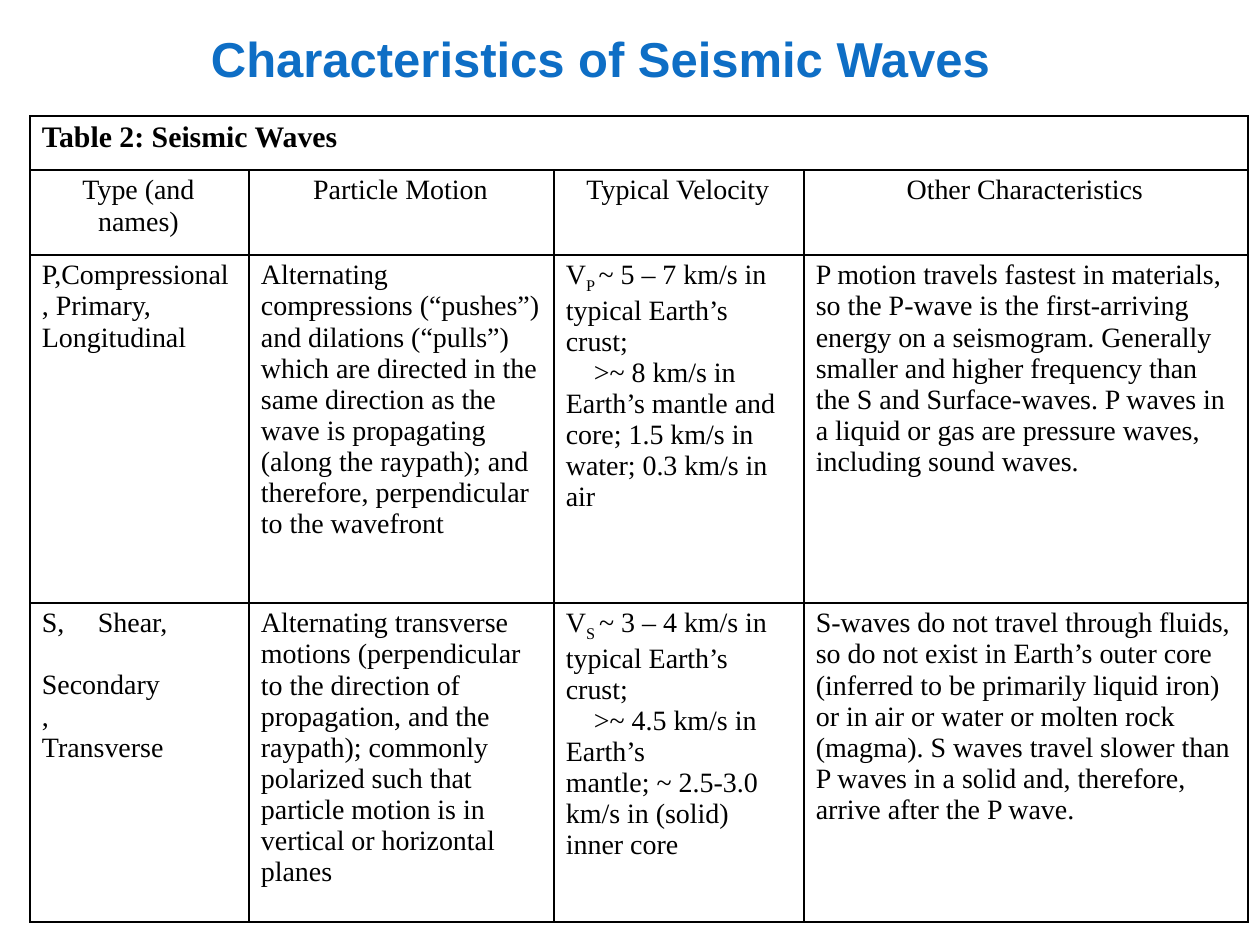
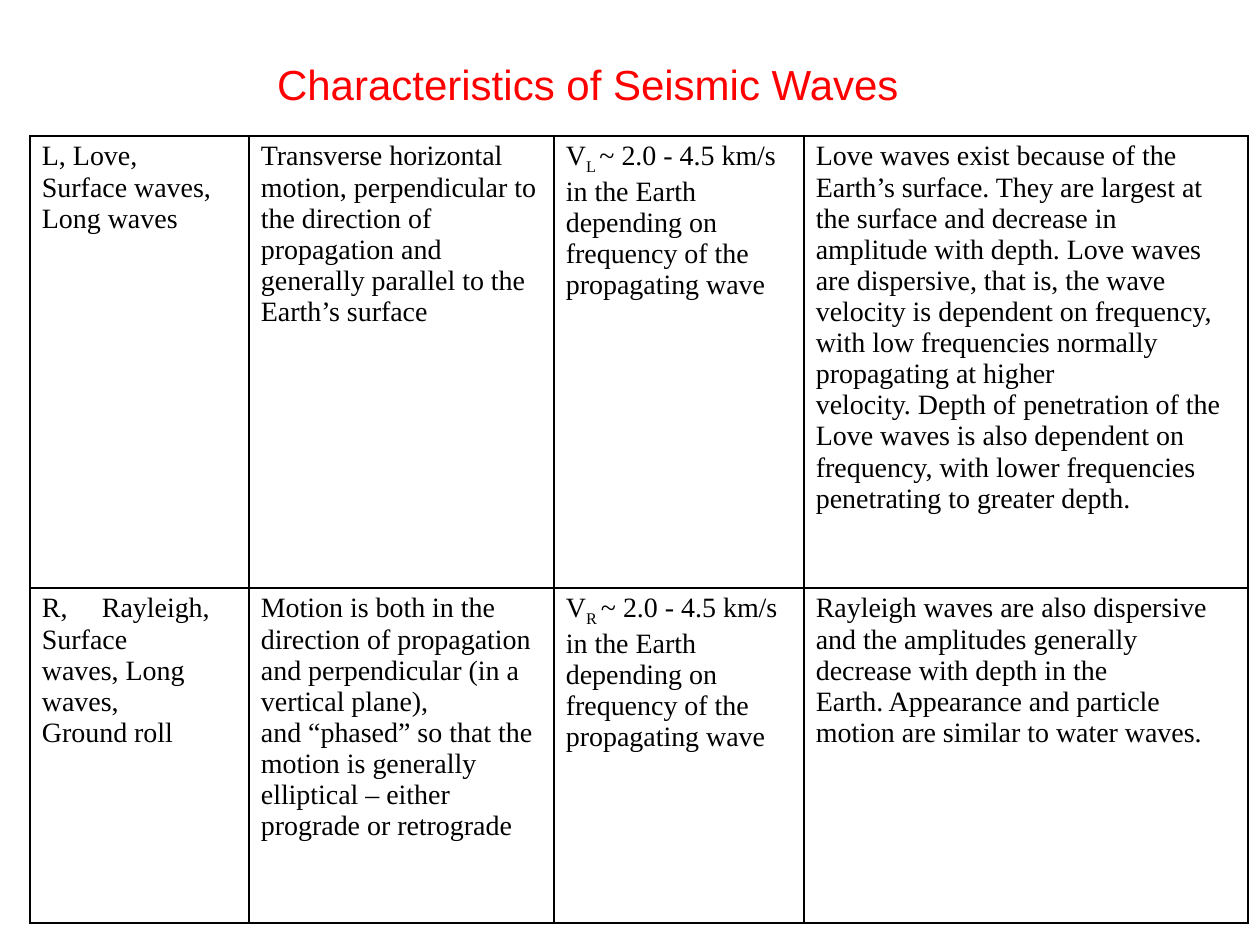
from dataclasses import dataclass

from lxml.etree import SubElement
from pptx import Presentation
from pptx.dml.color import RGBColor
from pptx.enum.text import MSO_ANCHOR, MSO_AUTO_SIZE, PP_ALIGN
from pptx.oxml.ns import qn
from pptx.util import Pt

EMU_PER_PX = 914400 / 126
BLACK = RGBColor(0x00, 0x00, 0x00)
BLUE = RGBColor(0x0E, 0x6E, 0xC5)
RED = RGBColor(0xFF, 0x00, 0x00)
TITLE_FONT = "Arial"
TABLE_FONT = "Times New Roman"
TITLE_ONLY_LAYOUT = 5
TABLE_LEFT = 30
COLUMN_WIDTHS = (219, 305, 250, 444)
BORDER_SIDES = ("a:lnL", "a:lnR", "a:lnT", "a:lnB")


def px(length: int) -> int:
    return round(length * EMU_PER_PX)


@dataclass(frozen=True)
class Line:
    """One paragraph of a cell; a part between underscores is a subscript."""
    text: str
    indent: int = 0
    tab: int = 0
    gap_before: int = 0


@dataclass(frozen=True)
class Row:
    height: int
    cells: tuple[tuple[Line, ...], ...]
    size: int = 16
    bold: bool = False
    centred: bool = False


@dataclass(frozen=True)
class Title:
    left: int
    top: int
    width: int
    height: int
    size: int
    color: RGBColor
    bold: bool


@dataclass(frozen=True)
class WavePage:
    title: Title
    table_top: int
    rows: tuple[Row, ...]


def lines(*texts: str) -> tuple[Line, ...]:
    return tuple(Line(text) for text in texts)


def surface_velocity(letter: str) -> tuple[Line, ...]:
    return lines(f"V_{letter} _~ 2.0 - 4.5 km/s in the Earth depending on "
                 "frequency of the propagating wave")


CAPTION = Row(54, (lines("Table 2: Seismic Waves"),), size=17, bold=True)
HEADINGS = Row(85, (
    lines("Type (and", "names)"),
    lines("Particle Motion"),
    lines("Typical Velocity"),
    lines("Other Characteristics"),
), centred=True)
P_WAVE = Row(348, (
    lines("P,Compressional", ", Primary,", "Longitudinal"),
    lines("Alternating compressions (“pushes”) and dilations (“pulls”) which are "
          "directed in the same direction as the wave is propagating (along the "
          "raypath); and therefore, perpendicular to the wavefront"),
    (Line("V_P _~ 5 – 7 km/s in typical Earth’s crust;"),
     Line(">~ 8 km/s in Earth’s mantle and core; 1.5 km/s in water; "
          "0.3 km/s in air", indent=28)),
    lines("P motion travels fastest in materials, so the P-wave is the "
          "first-arriving energy on a seismogram. Generally smaller and higher "
          "frequency than the S and Surface-waves. P waves in a liquid or gas "
          "are pressure waves, including sound waves."),
))
S_WAVE = Row(319, (
    (Line("S,\tShear,", tab=56), Line("Secondary", gap_before=31),
     Line(","), Line("Transverse")),
    lines("Alternating transverse motions (perpendicular to the direction of "
          "propagation, and the raypath); commonly polarized such that particle "
          "motion is in vertical or horizontal planes"),
    (Line("V_S _~ 3 – 4 km/s in typical Earth’s crust;"),
     Line(">~ 4.5 km/s in Earth’s", indent=28),
     Line("mantle; ~ 2.5-3.0 km/s in (solid) inner core")),
    lines("S-waves do not travel through fluids, so do not exist in Earth’s "
          "outer core (inferred to be primarily liquid iron) or in air or water "
          "or molten rock (magma). S waves travel slower than P waves in a solid "
          "and, therefore, arrive after the P wave."),
))
LOVE_WAVE = Row(452, (
    lines("L, Love,", "Surface waves,", "Long waves"),
    lines("Transverse horizontal motion, perpendicular to the direction of "
          "propagation and generally parallel to the Earth’s surface"),
    surface_velocity("L"),
    lines("Love waves exist because of the Earth’s surface. They are largest at "
          "the surface and decrease in amplitude with depth. Love waves are "
          "dispersive, that is, the wave velocity is dependent on frequency, "
          "with low frequencies normally propagating at higher",
          "velocity. Depth of penetration of the Love waves is also dependent on "
          "frequency, with lower frequencies penetrating to greater depth."),
))
RAYLEIGH_WAVE = Row(335, (
    (Line("R,\tRayleigh,", tab=60),
     *lines("Surface", "waves, Long", "waves,", "Ground roll")),
    lines("Motion is both in the direction of propagation and perpendicular "
          "(in a vertical plane),",
          "and “phased” so that the motion is generally elliptical – either "
          "prograde or retrograde"),
    surface_velocity("R"),
    lines("Rayleigh waves are also dispersive and the amplitudes generally "
          "decrease with depth in the",
          "Earth. Appearance and particle motion are similar to water waves."),
))

PAGES = (
    WavePage(Title(210, 24, 784, 63, 28, BLUE, True), 116,
             (CAPTION, HEADINGS, P_WAVE, S_WAVE)),
    WavePage(Title(276, 55, 626, 54, 24, RED, False), 136,
             (LOVE_WAVE, RAYLEIGH_WAVE)),
)


def style_font(font, name: str, size: int, color: RGBColor, bold: bool) -> None:
    font.name = name
    font.size = Pt(size)
    font.color.rgb = color
    font.bold = bold


def add_title(page, title: Title) -> None:
    box = page.shapes.title
    box.left, box.top = px(title.left), px(title.top)
    box.width, box.height = px(title.width), px(title.height)
    frame = box.text_frame
    frame.text = "Characteristics of Seismic Waves"
    frame.word_wrap = True
    frame.auto_size = MSO_AUTO_SIZE.NONE
    frame.vertical_anchor = MSO_ANCHOR.BOTTOM
    frame.margin_left = px(1)
    frame.margin_top = frame.margin_right = frame.margin_bottom = 0
    para = frame.paragraphs[0]
    para.alignment = PP_ALIGN.LEFT
    style_font(para.runs[0].font, TITLE_FONT, title.size, title.color, title.bold)


def fill_paragraph(para, line: Line, row: Row) -> None:
    para.alignment = PP_ALIGN.CENTER if row.centred else PP_ALIGN.LEFT
    if line.gap_before:
        para.space_before = px(line.gap_before)
    properties = para._p.get_or_add_pPr()
    if line.indent:
        properties.set("indent", str(px(line.indent)))
    if line.tab:
        tabs = SubElement(properties, qn("a:tabLst"))
        SubElement(tabs, qn("a:tab"), pos=str(px(line.tab)), algn="l")
    for position, part in enumerate(line.text.split("_")):
        span = para.add_run()
        span.text = part
        style_font(span.font, TABLE_FONT, row.size, BLACK, row.bold)
        if position % 2:
            span._r.get_or_add_rPr().set("baseline", "-24000")


def frame_cell(cell) -> None:
    """Give the cell a thin black outline, no fill and its margins."""
    properties = cell._tc.get_or_add_tcPr()
    for side in BORDER_SIDES:
        border = SubElement(properties, qn(side), w=str(Pt(1)))
        fill = SubElement(border, qn("a:solidFill"))
        SubElement(fill, qn("a:srgbClr"), val=str(BLACK))
    cell.fill.background()
    cell.margin_left, cell.margin_right = px(12), px(14)
    cell.margin_top, cell.margin_bottom = px(5), 0


def add_wave_table(page, top: int, rows: tuple[Row, ...]) -> None:
    frame = page.shapes.add_table(
        len(rows), len(COLUMN_WIDTHS), px(TABLE_LEFT), px(top),
        px(sum(COLUMN_WIDTHS)), px(sum(row.height for row in rows)))
    table = frame.table
    table.first_row = table.horz_banding = False
    for column, width in zip(table.columns, COLUMN_WIDTHS):
        column.width = px(width)
    for index, row in enumerate(rows):
        table.rows[index].height = px(row.height)
        for cell in table.rows[index].cells:
            frame_cell(cell)
        if len(row.cells) == 1:
            table.cell(index, 0).merge(table.cell(index, len(COLUMN_WIDTHS) - 1))
        for column, content in enumerate(row.cells):
            text_frame = table.cell(index, column).text_frame
            for number, line in enumerate(content):
                para = text_frame.add_paragraph() if number else text_frame.paragraphs[0]
                fill_paragraph(para, line, row)


def main() -> None:
    deck = Presentation()
    deck.slide_width, deck.slide_height = px(1260), px(945)
    for wave_page in PAGES:
        page = deck.slides.add_slide(deck.slide_layouts[TITLE_ONLY_LAYOUT])
        add_wave_table(page, wave_page.table_top, wave_page.rows)
        add_title(page, wave_page.title)
    deck.save("out.pptx")


if __name__ == "__main__":
    main()
